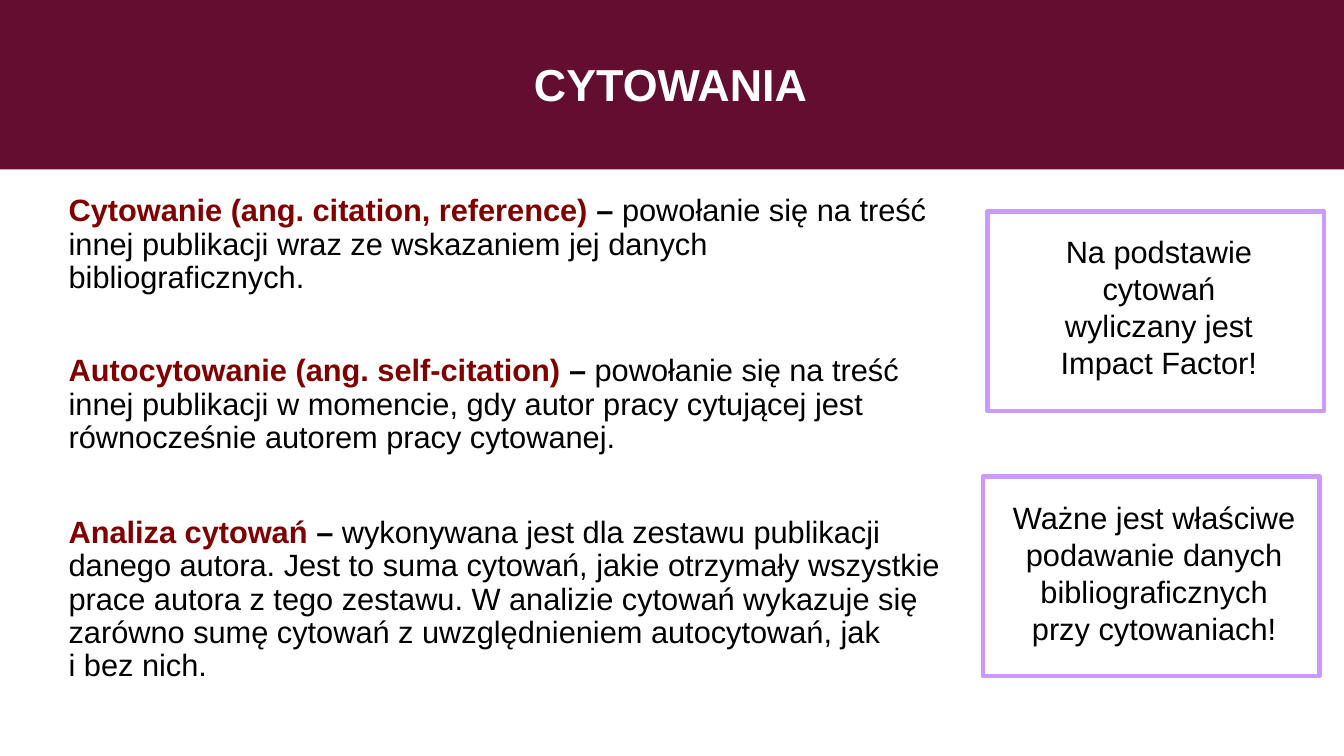
from pptx import Presentation
from pptx.dml.color import RGBColor
from pptx.enum.shapes import MSO_SHAPE as Form
from pptx.enum.text import MSO_ANCHOR as Anchor, PP_ALIGN as Align
from pptx.util import Cm, Pt


def tint(code):
    return RGBColor.from_string(code)


class Page:
    font = "Arial"
    size = 22
    wine = "630D30"
    red = "800000"
    lilac = "CC99FF"
    black = "000000"
    white = "FFFFFF"

    def __init__(self, deck):
        self.slide = deck.slides.add_slide(deck.slide_layouts[6])

    def rect(self, box):
        shape = self.slide.shapes.add_shape(Form.RECTANGLE, *map(Cm, box))
        shape.shadow.inherit = False
        return shape

    def frame(self, shape, left=0, top=0, right=0):
        frame = shape.text_frame
        frame.word_wrap = True
        frame.vertical_anchor = Anchor.TOP
        frame.margin_left, frame.margin_top = Cm(left), Cm(top)
        frame.margin_right, frame.margin_bottom = Cm(right), Cm(0)
        return frame

    def label(self, box, top):
        return self.frame(self.slide.shapes.add_textbox(*map(Cm, box)), top=top)

    def style(self, run, color, bold=False, size=size):
        font = run.font
        font.name, font.size, font.bold = self.font, Pt(size), bold
        font.color.rgb = tint(color)

    def band(self, box):
        shape = self.rect(box)
        shape.fill.solid()
        shape.fill.fore_color.rgb = tint(self.wine)
        shape.line.fill.background()

    def title(self, box, text):
        para = self.label(box, 0.71).paragraphs[0]
        para.text = text
        para.alignment = Align.CENTER
        self.style(para.runs[0], self.white, True, 32)

    def entry(self, box, term, text, tail=None):
        frame = self.label(box, 0.13)
        para = frame.paragraphs[0]
        para.line_spacing = Pt(23.8)
        parts = (term + " ", self.red, True), ("– ", self.black, True), (text, self.black, False)
        for words, color, bold in parts:
            run = para.add_run()
            run.text = words
            self.style(run, color, bold)
        if tail:
            para = frame.add_paragraph()
            para.text = tail
            para.line_spacing = Pt(23.3)
            self.style(para.runs[0], self.black)

    def card(self, box, pad, text):
        shape = self.rect(box)
        shape.fill.background()
        shape.line.color.rgb = tint(self.lilac)
        shape.line.width = Pt(3.25)
        para = self.frame(shape, *pad).paragraphs[0]
        para.text = text
        para.alignment = Align.CENTER
        self.style(para.runs[0], self.black)


def main():
    deck = Presentation()
    deck.slide_width, deck.slide_height = Cm(33.87), Cm(19.05)
    page = Page(deck)
    page.band((0, 0, 33.87, 4.27))
    page.title((1.6, 0.71, 30.6, 2.79), "CYTOWANIA")
    page.entry(
        (1.73, 4.78, 21.74, 2.67),
        "Cytowanie (ang. citation, reference)",
        "powołanie się na treść innej publikacji wraz ze wskazaniem jej danych bibliograficznych.",
    )
    page.entry(
        (1.73, 8.81, 21.08, 2.67),
        "Autocytowanie (ang. self-citation)",
        "powołanie się na treść innej publikacji w momencie, gdy autor pracy cytującej jest "
        "równocześnie autorem pracy cytowanej.",
    )
    page.entry(
        (1.73, 12.88, 22.1, 4.34),
        "Analiza cytowań",
        "wykonywana jest dla zestawu publikacji danego autora. Jest to suma cytowań, jakie "
        "otrzymały wszystkie prace autora z tego zestawu. W analizie cytowań wykazuje się "
        "zarówno sumę cytowań z uwzględnieniem autocytowań, jak",
        "i bez nich.",
    )
    page.card(
        (24.89, 5.33, 8.48, 5.03), (1.8, 0.53, 1.65),
        "Na podstawie cytowań wyliczany jest Impact Factor!",
    )
    page.card(
        (24.77, 12.01, 8.48, 5.03), (0.71, 0.56, 0.56),
        "Ważne jest właściwe podawanie danych bibliograficznych przy cytowaniach!",
    )
    deck.save("out.pptx")


if __name__ == "__main__":
    main()
